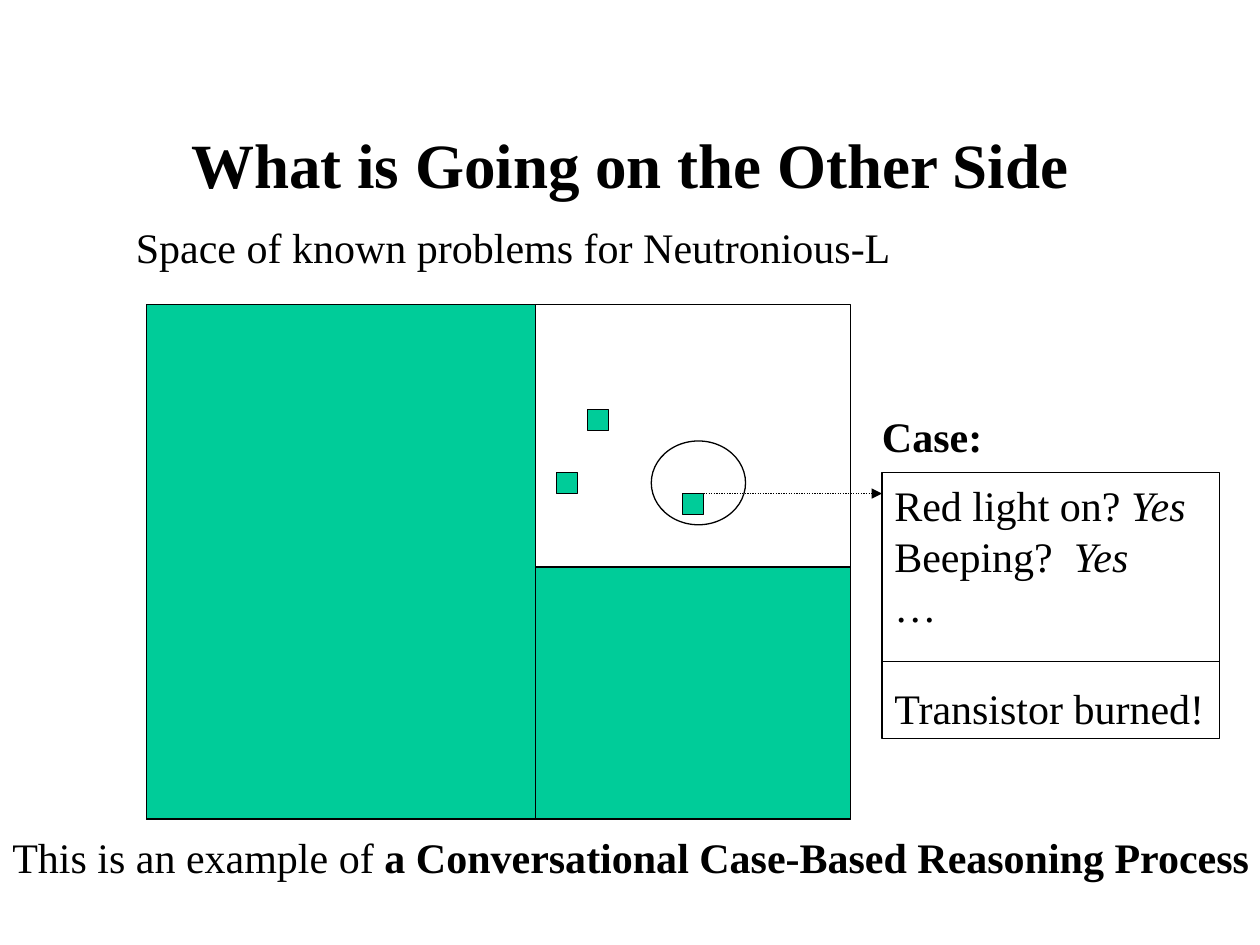
from typing import NamedTuple

from lxml.etree import SubElement
from pptx import Presentation
from pptx.dml.color import RGBColor
from pptx.enum.dml import MSO_LINE
from pptx.enum.shapes import MSO_CONNECTOR, MSO_SHAPE as SHAPE
from pptx.enum.text import MSO_ANCHOR, PP_ALIGN
from pptx.oxml.ns import qn
from pptx.util import Cm, Pt

BLACK = RGBColor(0x00, 0x00, 0x00)
GREEN = RGBColor(0x00, 0xCC, 0x99)
FONT = "Times New Roman"
LINE_PITCH = Pt(29)


class Box(NamedTuple):
    """Left, top, width and height in centimetres."""
    left: float
    top: float
    width: float
    height: float

    def lengths(self) -> list:
        return [Cm(value) for value in self]


class Span(NamedTuple):
    text: str
    bold: bool = False
    italic: bool = False


# Problem space, split into excluded (green) and remaining (white) regions
SPACE = Box(2.96, 6.14, 14.18, 10.37)
SPLIT_X, SPLIT_Y = 10.8, 11.43
RIGHT, BOTTOM = SPACE.left + SPACE.width, SPACE.top + SPACE.height
EXCLUDED = [
    Box(SPACE.left, SPACE.top, SPLIT_X - SPACE.left, SPACE.height),
    Box(SPLIT_X, SPLIT_Y, RIGHT - SPLIT_X, BOTTOM - SPLIT_Y),
]
CASE_SIZE = 0.42
KNOWN_CASES = [(11.22, 9.53), (11.85, 8.26), (13.76, 9.95)]
MATCH_RING = Box(13.13, 8.89, 1.9, 1.69)

# Details of the matching case
CASE = Box(17.78, 9.53, 6.81, 5.36)
CASE_LINES = [
    [Span("Red light on? "), Span("Yes", italic=True)],
    [Span("Beeping?  "), Span("Yes", italic=True)],
    [Span("…")],
    [Span("Transistor burned!")],
]
DIVIDER_Y = 13.34

CAPTIONS = [
    (Box(2.49, 4.34, 15.88, 1.27),
     [Span("Space of known problems for Neutronious-L")]),
    (Box(0, 16.64, 25.45, 1.27),
     [Span("This is an example of "),
      Span("a Conversational Case-Based Reasoning Process", bold=True)]),
    (Box(17.53, 8.15, 2.54, 1.27), [Span("Case:", bold=True)]),
]


def style_line(line) -> None:
    line.color.rgb = BLACK
    line.width = Pt(0.75)


def add_outline(shapes, kind: SHAPE, box: Box, fill: RGBColor | None = None):
    shape = shapes.add_shape(kind, *box.lengths())
    shape.shadow.inherit = False
    if fill is None:
        shape.fill.background()
    else:
        shape.fill.solid()
        shape.fill.fore_color.rgb = fill
    style_line(shape.line)
    return shape


def add_rule(shapes, left: float, right: float, y: float):
    rule = shapes.add_connector(MSO_CONNECTOR.STRAIGHT,
                                Cm(left), Cm(y), Cm(right), Cm(y))
    style_line(rule.line)
    SubElement(rule._element.spPr, qn("a:effectLst"))
    return rule


def write_lines(frame, lines: list[list[Span]]) -> None:
    frame.word_wrap = False
    frame.vertical_anchor = MSO_ANCHOR.TOP
    for number, spans in enumerate(lines):
        paragraph = frame.add_paragraph() if number else frame.paragraphs[0]
        paragraph.alignment = PP_ALIGN.LEFT
        paragraph.line_spacing = LINE_PITCH
        paragraph.font.name, paragraph.font.size = FONT, Pt(24)
        paragraph.font.color.rgb = BLACK
        for span in spans:
            run = paragraph.add_run()
            run.text = span.text
            run.font.bold, run.font.italic = span.bold, span.italic


def add_case(shapes) -> None:
    details = add_outline(shapes, SHAPE.RECTANGLE, CASE).text_frame
    write_lines(details, CASE_LINES)
    details.paragraphs[-1].space_before = LINE_PITCH
    add_rule(shapes, CASE.left, CASE.left + CASE.width, DIVIDER_Y)

    # Dotted arrow from the matching case to its details
    matched_left, matched_top = KNOWN_CASES[-1]
    arrow = add_rule(shapes, matched_left + CASE_SIZE, CASE.left, matched_top)
    arrow.line.dash_style = MSO_LINE.ROUND_DOT
    SubElement(arrow.line._get_or_add_ln(), qn("a:tailEnd"), type="triangle")


def main() -> None:
    deck = Presentation()
    deck.slide_width, deck.slide_height = Cm(25.4), Cm(19.05)
    slide = deck.slides.add_slide(deck.slide_layouts[5])
    shapes = slide.shapes

    # Title
    title = shapes.title
    title.left, title.top, title.width, title.height = Box(1.9, 1.7, 21.6, 3.18).lengths()
    title.text_frame.text = "What is Going on the Other Side"
    title.text_frame.vertical_anchor = MSO_ANCHOR.MIDDLE
    heading = title.text_frame.paragraphs[0]
    heading.alignment = PP_ALIGN.CENTER
    heading.font.name, heading.font.size, heading.font.bold = FONT, Pt(36), True
    heading.font.color.rgb = BLACK

    # Problem space with its known cases
    add_outline(shapes, SHAPE.RECTANGLE, SPACE)
    for left, top in KNOWN_CASES:
        add_outline(shapes, SHAPE.RECTANGLE, Box(left, top, CASE_SIZE, CASE_SIZE), GREEN)
    add_case(shapes.add_group_shape().shapes)
    for region in EXCLUDED:
        add_outline(shapes, SHAPE.RECTANGLE, region, GREEN)
    add_outline(shapes, SHAPE.OVAL, MATCH_RING)

    # Captions
    for box, spans in CAPTIONS:
        write_lines(shapes.add_textbox(*box.lengths()).text_frame, [spans])

    deck.save("out.pptx")


if __name__ == "__main__":
    main()
